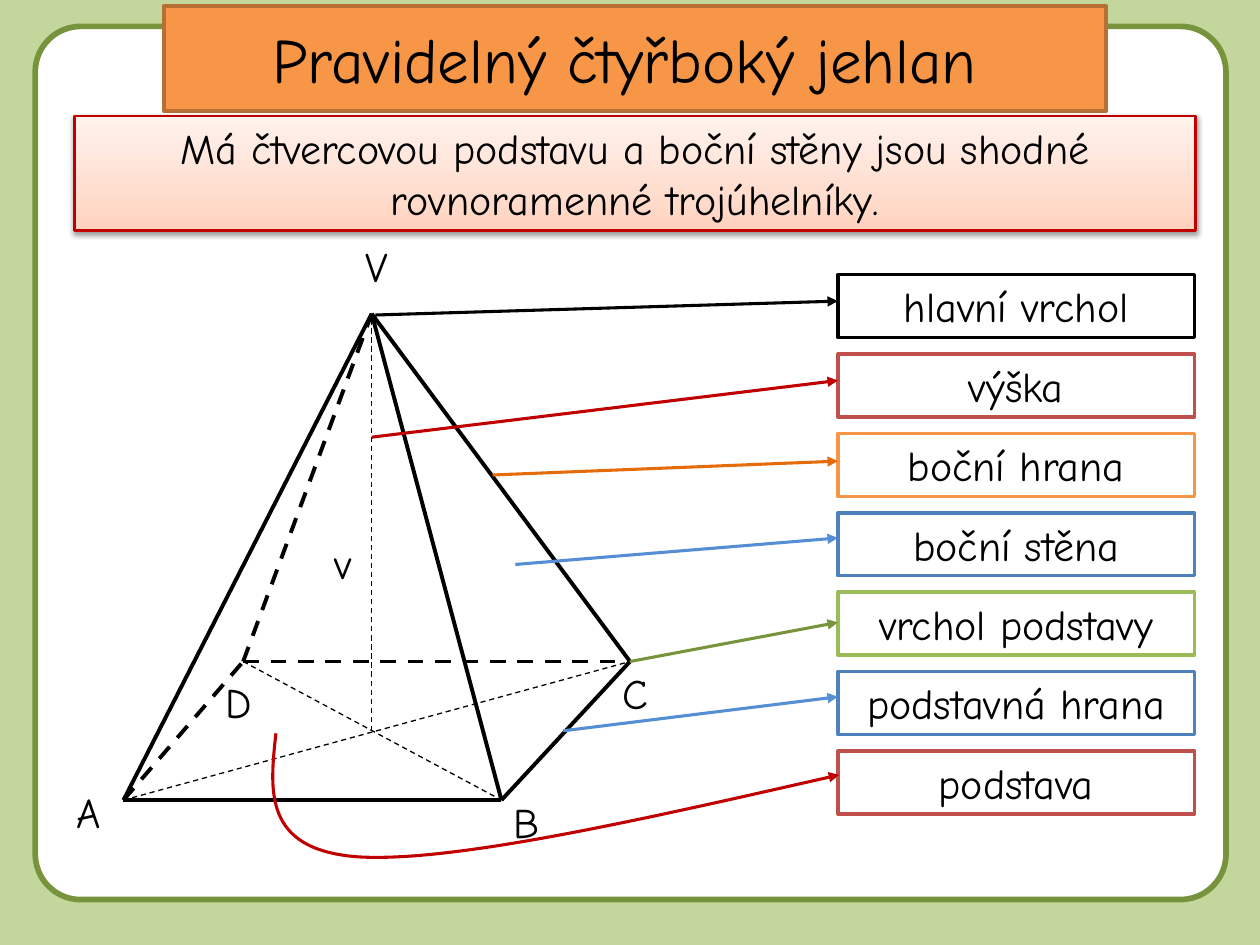
import copy
import dataclasses

import lxml.etree
import pptx
import pptx.dml.color
import pptx.enum.dml
import pptx.enum.shapes
import pptx.enum.text
import pptx.oxml.ns
import pptx.util

Inches = pptx.util.Inches
Pt = pptx.util.Pt
SHAPE = pptx.enum.shapes.MSO_SHAPE
ALIGN = pptx.enum.text.PP_ALIGN
ANCHOR = pptx.enum.text.MSO_ANCHOR
qn = pptx.oxml.ns.qn


@dataclasses.dataclass(frozen=True)
class Theme:
    font: str = "Comic Neue"
    title_size: int = 36
    body_size: int = 24
    page: str = "C3D69B"
    white: str = "FFFFFF"
    black: str = "000000"
    moss: str = "77933C"
    green: str = "9BBB59"
    orange: str = "F79646"
    rust: str = "B76F34"
    amber: str = "E46C0A"
    blue: str = "4F81BD"
    sky: str = "558ED5"
    brick: str = "C0504D"
    red: str = "C00000"
    blush: tuple = ((0, "FFD2BD"), (0.35, "FFDED0"), (1, "FFF2ED"))


def rgb(value):
    return pptx.dml.color.RGBColor.from_string(value)


def write(sp, text, size, color, font, align=ALIGN.CENTER, anchor=ANCHOR.MIDDLE):
    tf = sp.text_frame
    tf.word_wrap = True
    tf.auto_size = pptx.enum.text.MSO_AUTO_SIZE.SHAPE_TO_FIT_TEXT
    tf.vertical_anchor = anchor
    p = tf.paragraphs[0]
    p.alignment = align
    r = p.add_run()
    r.text = text
    r.font.name = font
    r.font.size = Pt(size)
    r.font.color.rgb = rgb(color)


class Deck:
    """Holds the theme and the current slide and draws each kind of element."""

    def __init__(self, theme):
        self.theme = theme
        self.prs = pptx.Presentation()
        self.prs.slide_width, self.prs.slide_height = Inches(10), Inches(7.5)
        self.s = self.prs.slides.add_slide(self.prs.slide_layouts[5])
        self.s.background.fill.solid()
        self.s.background.fill.fore_color.rgb = rgb(theme.page)

    def text(self, sp, text, **fmt):
        t = self.theme
        write(sp, text, **{"size": t.body_size, "color": t.black, "font": t.font, **fmt})

    def style(self, sp, fill, line, width):
        sp.fill.solid()
        sp.fill.fore_color.rgb = rgb(fill)
        self.stroke(sp, line, width)

    def stroke(self, sp, color, width, dash=False, arrow=False):
        sp.line.color.rgb = rgb(color)
        sp.line.width = Pt(width)
        if dash:
            sp.line.dash_style = pptx.enum.dml.MSO_LINE.DASH
        if arrow:
            ln = sp._element.spPr.find(qn("a:ln"))
            lxml.etree.SubElement(ln, qn("a:headEnd"), type="triangle")

    def title(self, text, box):
        t = self.theme
        sp = self.s.shapes.title
        sp.left, sp.top, sp.width, sp.height = map(Inches, box)
        self.style(sp, t.orange, t.rust, 2)
        self.text(sp, text, size=t.title_size)

    def box(self, box, line, width=2, text=None, kind=SHAPE.RECTANGLE):
        sp = self.s.shapes.add_shape(kind, *map(Inches, box))
        sp.shadow.inherit = False
        self.style(sp, self.theme.white, line, width)
        if text:
            self.text(sp, text)
        return sp

    def panel(self, box):
        sp = self.box(box, self.theme.moss, 3.25, kind=SHAPE.ROUNDED_RECTANGLE)
        sp.adjustments[0] = 0.052
        self.s.shapes.title._element.addprevious(sp._element)

    def banner(self, box, text):
        sp = self.box(box, self.theme.red, 1.5, text)
        sp.fill.gradient()
        sp.fill.gradient_angle = 90
        spPr = sp._element.spPr
        gs = spPr.find(qn("a:gradFill")).find(qn("a:gsLst"))[0]
        gs.addnext(copy.deepcopy(gs))
        for stop, (position, color) in zip(sp.fill.gradient_stops, self.theme.blush):
            stop.position = position
            stop.color.rgb = rgb(color)
        shadow = lxml.etree.SubElement(
            spPr.find(qn("a:effectLst")), qn("a:outerShdw"), blurRad=str(Pt(3.1)),
            dist=str(Pt(1.6)), dir="5400000", rotWithShape="0")
        clr = lxml.etree.SubElement(shadow, qn("a:srgbClr"), val=self.theme.black)
        lxml.etree.SubElement(clr, qn("a:alpha"), val="38000")

    def line(self, start, end, color, width, shapes=None, **fmt):
        shapes = shapes or self.s.shapes
        sp = shapes.add_connector(
            pptx.enum.shapes.MSO_CONNECTOR.STRAIGHT, *map(Inches, start + end))
        self.stroke(sp, color, width, **fmt)
        lxml.etree.SubElement(sp._element.spPr, qn("a:effectLst"))

    def curve(self, points, color, width):
        start, *rest = [tuple(map(Inches, point)) for point in points]
        builder = self.s.shapes.build_freeform(*start)
        builder.add_line_segments(rest, close=False)
        sp = builder.convert_to_shape()
        sp.shadow.inherit = False
        sp.fill.background()
        self.stroke(sp, color, width, arrow=True)
        steps = list(sp._element.iter(qn("a:lnTo")))
        for i in range(0, len(steps), 3):
            bezier = lxml.etree.Element(qn("a:cubicBezTo"))
            steps[i].addprevious(bezier)
            for step in steps[i:i + 3]:
                bezier.append(step[0])
                step.getparent().remove(step)

    def letter(self, text, left, top):
        sp = self.s.shapes.add_textbox(*map(Inches, (left, top, 0.63, 0.5)))
        self.text(sp, text, align=ALIGN.LEFT, anchor=ANCHOR.TOP)


def main():
    t = Theme()
    deck = Deck(t)
    deck.panel((0.28, 0.21, 9.45, 6.93))
    deck.title("Pravidelný čtyřboký jehlan ", (1.3, 0.11, 7.48, 0.71))

    a, b, c, d = (0.98, 6.35), (3.98, 6.35), (5, 5.25), (1.93, 5.25)
    apex, center = (2.95, 2.49), (2.95, 5.8)
    pyramid = deck.s.shapes.add_group_shape().shapes
    edges = (
        (2.25, False, ((a, b), (b, c), (a, apex), (apex, b), (apex, c))),
        (2.25, True, ((d, c), (a, d), (d, apex))),
        (0.75, True, ((a, c), (d, b), (center, apex))),
    )
    for width, dash, pairs in edges:
        for start, end in pairs:
            deck.line(start, end, t.black, width, pyramid, dash=dash)

    labels = (
        ("hlavní vrchol", t.black, t.black, 2.39, (2.98, 2.5)),
        ("výška", t.brick, t.red, 3.02, (2.95, 3.47)),
        ("boční hrana", t.orange, t.amber, 3.66, (3.91, 3.77)),
        ("boční stěna", t.blue, t.sky, 4.27, (4.09, 4.48)),
        ("vrchol podstavy", t.green, t.moss, 4.94, c),
        ("podstavná hrana", t.blue, t.sky, 5.53, (4.47, 5.8)),
        ("podstava", t.brick, t.red, None, None),
    )
    for i, (text, border, color, y, target) in enumerate(labels):
        deck.box((6.65, 2.18 + 0.63 * i, 2.83, 0.5), border, text=text)
        if target:
            deck.line((6.65, y), target, color, 1.75, arrow=True)
    deck.curve(((6.66, 6.15), (5.12, 6.5), (3.58, 6.85), (2.83, 6.8),
                (2.09, 6.74), (2.14, 6.28), (2.19, 5.82)), t.red, 1.75)

    for text, left, top in (("V", 2.8, 1.86), ("v", 2.56, 4.22), ("C", 4.84, 5.25),
                            ("B", 3.98, 6.27), ("A", 0.51, 6.19), ("D", 1.69, 5.32)):
        deck.letter(text, left, top)
    deck.banner((0.59, 0.92, 8.9, 0.91),
                "Má čtvercovou podstavu a boční stěny jsou shodné rovnoramenné trojúhelníky.")
    deck.prs.save("out.pptx")


if __name__ == "__main__":
    main()
